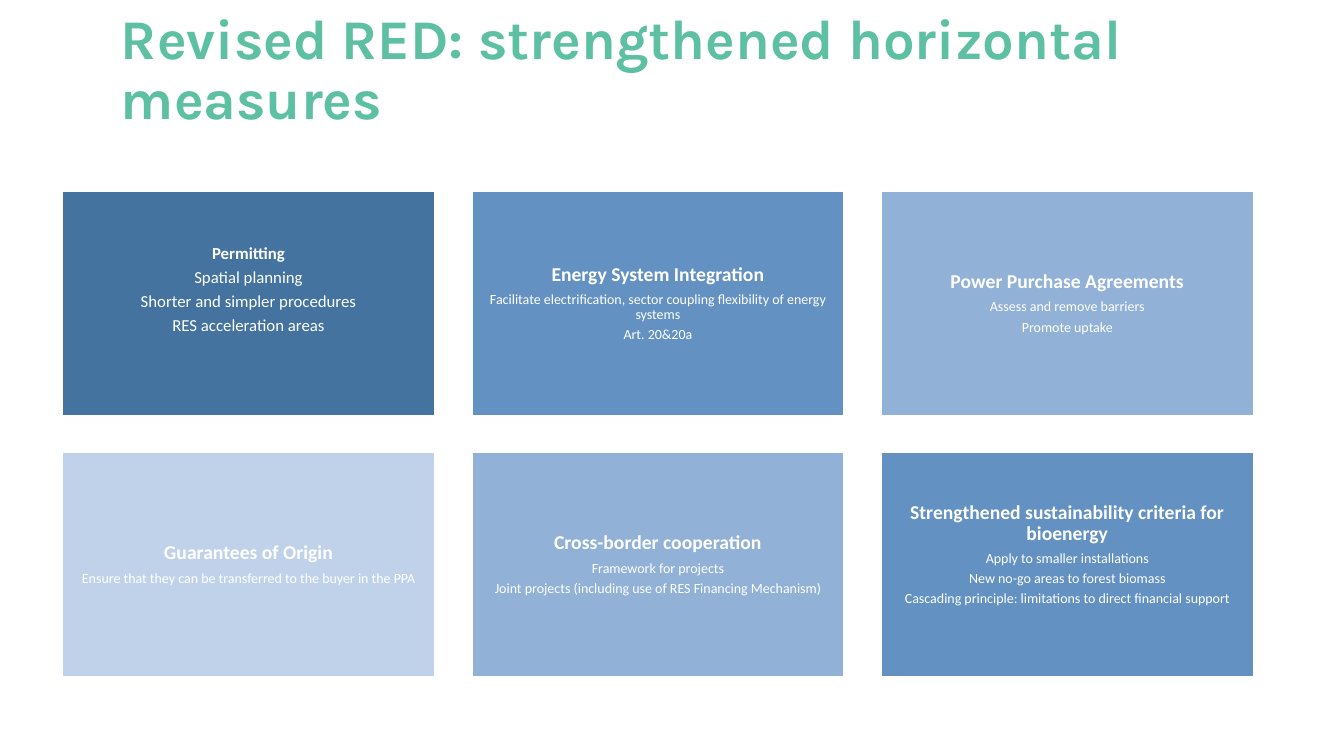
"""Build the slide on the strengthened horizontal measures of the revised RED."""
from pptx import Presentation, util as u
from pptx.dml.color import RGBColor
from pptx.enum import shapes, text

WHITE = RGBColor(0xFF, 0xFF, 0xFF)
GREEN = RGBColor(0x5D, 0xC0, 0xA3)
NAVY = RGBColor(0x43, 0x73, 0x9E)
BLUE = RGBColor(0x63, 0x91, 0xC1)
SKY = RGBColor(0x91, 0xB1, 0xD6)
PALE = RGBColor(0xC0, 0xD2, 0xEA)

COLUMNS = 3
GRID_LEFT, GRID_TOP = 0.62, 1.9
CARD_WIDTH, CARD_HEIGHT, GAP = 3.69, 2.22, 0.37
LINE_SPACING, SPACE_AFTER = 0.9, 0.35

# Fill, heading size, detail size, extra bottom margin, lines
MEASURES = [
    (NAVY, 12, 12, 0.27, ["Permitting", "Spatial planning",
                          "Shorter and simpler procedures", "RES acceleration areas"]),
    (BLUE, 14, 10, 0, ["Energy System Integration",
                       "Facilitate electrification, sector coupling flexibility of energy systems",
                       "Art. 20&20a"]),
    (SKY, 14, 10, 0, ["Power Purchase Agreements", "Assess and remove barriers",
                      "Promote uptake"]),
    (PALE, 14, 10, 0, ["Guarantees of Origin",
                       "Ensure that they can be transferred to the buyer in the PPA"]),
    (SKY, 14, 10, 0, ["Cross-border cooperation", "Framework for projects",
                      "Joint projects (including use of RES Financing Mechanism)"]),
    (BLUE, 14, 10, 0.2, ["Strengthened sustainability criteria for bioenergy",
                         "Apply to smaller installations",
                         "New no-go areas to forest biomass",
                         "Cascading principle: limitations to direct financial support"]),
]


def apply(target, values):
    """Set each named attribute of the target."""
    for name, value in values.items():
        setattr(target, name, value)


def set_frame(frame, anchor, margins):
    """Set wrapping, anchor and the left, top, right and bottom margins in inches."""
    sides = ("margin_left", "margin_top", "margin_right", "margin_bottom")
    apply(frame, {"word_wrap": True, "auto_size": text.MSO_AUTO_SIZE.NONE,
                  "vertical_anchor": anchor,
                  **{side: u.Inches(size) for side, size in zip(sides, margins)}})


def write(para, words, align, after, color, **font):
    """Write one formatted run into a paragraph."""
    apply(para, {"alignment": align, "line_spacing": LINE_SPACING,
                 "space_before": u.Pt(0), "space_after": u.Pt(after)})
    span = para.add_run()
    span.text = words
    apply(span.font, font)
    span.font.color.rgb = color


def add_title(page, words):
    """Place and format the title placeholder."""
    title = page.shapes.title
    apply(title, {"left": u.Inches(1.1), "top": u.Inches(0.53),
                  "width": u.Inches(12.03), "height": u.Inches(0.78)})
    set_frame(title.text_frame, text.MSO_ANCHOR.BOTTOM, (0.1, 0.05, 0.1, 0))
    write(title.text_frame.paragraphs[0], words, text.PP_ALIGN.LEFT, 0, GREEN,
          name="Karla", size=u.Pt(40), bold=True)


def add_card(page, index, fill, heading_size, detail_size, lift, lines):
    """Add one measure card at its cell of the grid."""
    row, column = divmod(index, COLUMNS)
    box = page.shapes.add_shape(
        shapes.MSO_SHAPE.RECTANGLE,
        u.Inches(GRID_LEFT + column * (CARD_WIDTH + GAP)),
        u.Inches(GRID_TOP + row * (CARD_HEIGHT + GAP)),
        u.Inches(CARD_WIDTH), u.Inches(CARD_HEIGHT))
    box.shadow.inherit = False
    box.fill.solid()
    box.fill.fore_color.rgb = fill
    box.line.color.rgb = WHITE
    box.line.width = u.Pt(1)
    margin = 0.05 if heading_size == 12 else 0.06
    frame = box.text_frame
    set_frame(frame, text.MSO_ANCHOR.MIDDLE, (margin, margin, margin, margin + lift))
    for number, words in enumerate(lines):
        para = frame.add_paragraph() if number else frame.paragraphs[0]
        size = detail_size if number else heading_size
        write(para, words, text.PP_ALIGN.CENTER, SPACE_AFTER * size, WHITE,
              name="Calibri", size=u.Pt(size), bold=number == 0)


def main():
    """Build and save the deck."""
    deck = Presentation()
    apply(deck, {"slide_width": u.Inches(13.33), "slide_height": u.Inches(7.5)})
    page = deck.slides.add_slide(deck.slide_layouts.get_by_name("Title Only"))
    add_title(page, "Revised RED: strengthened horizontal measures")
    for index, measure in enumerate(MEASURES):
        add_card(page, index, *measure)
    deck.save("out.pptx")


if __name__ == "__main__":
    main()
